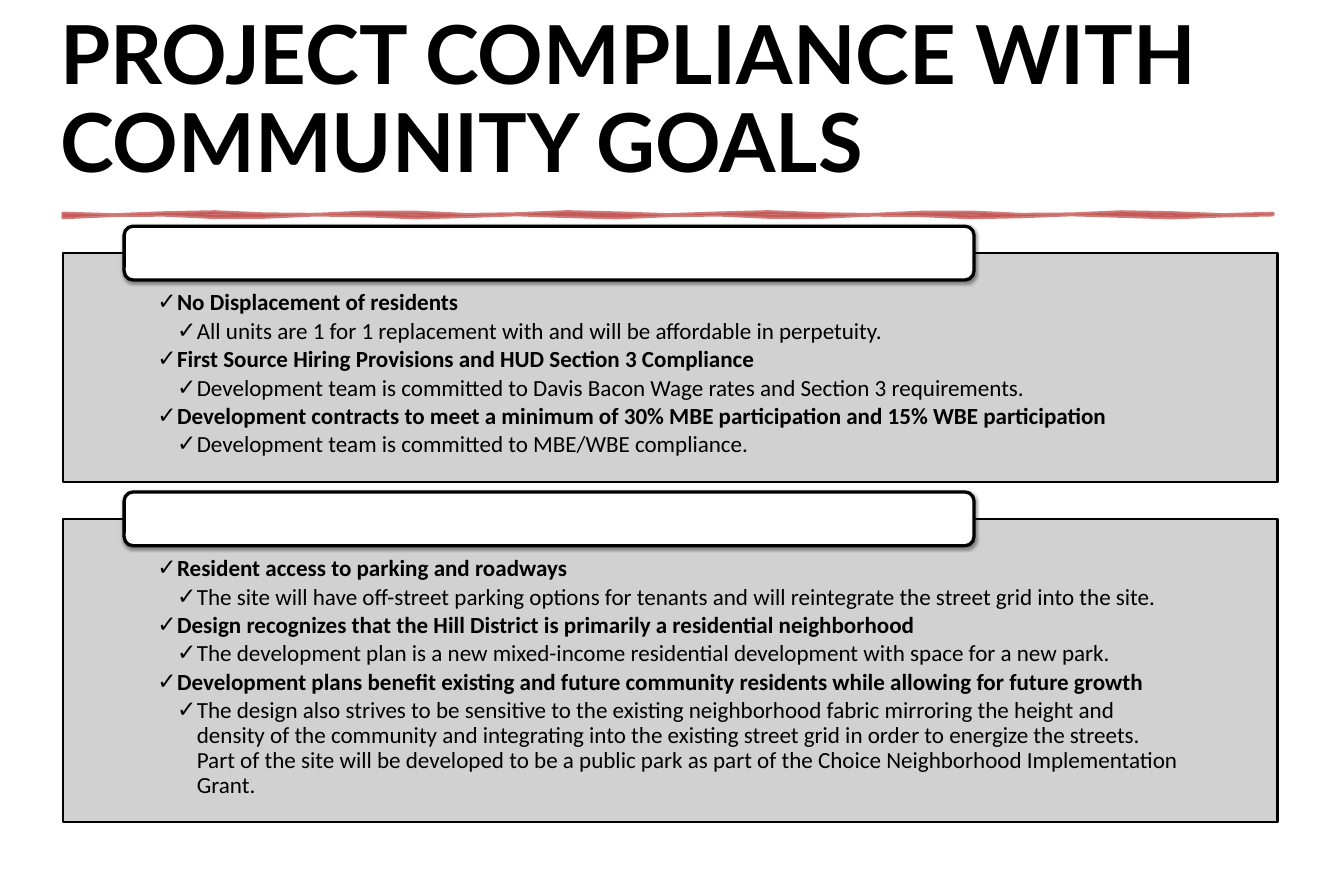
from math import sin

from lxml import etree
from pptx import Presentation
from pptx.dml.color import RGBColor
from pptx.enum.shapes import MSO_SHAPE
from pptx.enum.text import MSO_ANCHOR, PP_ALIGN
from pptx.oxml.ns import qn
from pptx.util import Pt

RECTANGLE = MSO_SHAPE.RECTANGLE
ROUNDED = MSO_SHAPE.ROUNDED_RECTANGLE
TOP, BOTTOM = MSO_ANCHOR.TOP, MSO_ANCHOR.BOTTOM
LEFT = PP_ALIGN.LEFT

BLACK = RGBColor(0x00, 0x00, 0x00)
WHITE = RGBColor(0xFF, 0xFF, 0xFF)
GRAY = RGBColor(0xCC, 0xCC, 0xCC)
RED = RGBColor(0xC0, 0x50, 0x4D)

MARGIN = 57.6
PANEL_WIDTH = 1105.92
TAB_LEFT, TAB_WIDTH, TAB_HEIGHT = 113.04, 774, 48.96
INDENT = 18

RESIDENT_GOALS = [
    ("No Displacement of residents",
     "All units are 1 for 1 replacement with and will be affordable in perpetuity."),
    ("First Source Hiring Provisions and HUD Section 3 Compliance",
     "Development team is committed to Davis Bacon Wage rates and Section 3 requirements."),
    ("Development contracts to meet a minimum of 30% MBE participation and 15% WBE participation",
     "Development team is committed to MBE/WBE compliance."),
]
DESIGN_GOALS = [
    ("Resident access to parking and roadways",
     "The site will have off-street parking options for tenants and will reintegrate "
     "the street grid into the site."),
    ("Design recognizes that the Hill District is primarily a residential neighborhood",
     "The development plan is a new mixed-income residential development with space "
     "for a new park."),
    ("Development plans benefit existing and future community residents while allowing "
     "for future growth",
     "The design also strives to be sensitive to the existing neighborhood fabric "
     "mirroring the height and density of the community and integrating into the "
     "existing street grid in order to energize the streets. Part of the site will be "
     "developed to be a public park as part of the Choice Neighborhood Implementation "
     "Grant."),
]


def set_opacity(color_parent, percent):
    color = color_parent.find(".//" + qn("a:srgbClr"))
    etree.SubElement(color, qn("a:alpha"), val=str(percent * 1000))


def paint(shape, fill, line, weight):
    shape.shadow.inherit = False
    shape.fill.solid()
    shape.fill.fore_color.rgb = fill
    shape.line.color.rgb = line
    shape.line.width = Pt(weight)


def set_frame(frame, anchor, left, top, right, bottom):
    frame.word_wrap = True
    frame.vertical_anchor = anchor
    frame.margin_left, frame.margin_top = Pt(left), Pt(top)
    frame.margin_right, frame.margin_bottom = Pt(right), Pt(bottom)


def style_text(paragraph, font_name, size, bold):
    paragraph.alignment = LEFT
    paragraph.line_spacing = 0.9
    font = paragraph.font
    font.name = font_name
    font.size = Pt(size)
    font.bold = bold
    font.color.rgb = BLACK


def add_title(slide, text):
    title = slide.shapes.add_textbox(Pt(54.72), Pt(7.2), Pt(1142.64), Pt(165.6))
    set_frame(title.text_frame, BOTTOM, 0, 0, 0, 0)
    paragraph = title.text_frame.paragraphs[0]
    paragraph.text = text
    style_text(paragraph, "Lato", 74, True)


def stroke_edge(base, phase):
    return [(Pt(MARGIN + 45.9 * step), Pt(base + 1.4 * sin(1.7 * step + phase)))
            for step in range(25)]


def add_brush_stroke(slide):
    outline = stroke_edge(194.4, 0) + stroke_edge(196.6, 2)[::-1]
    builder = slide.shapes.build_freeform(*outline[0])
    builder.add_line_segments(outline[1:])
    stroke = builder.convert_to_shape()
    paint(stroke, RED, RED, 3.5)
    properties = stroke._element.spPr
    set_opacity(properties.find(qn("a:solidFill")), 75)
    set_opacity(properties.find(qn("a:ln")), 75)


def add_goal_line(paragraph, text, level):
    paragraph.text = text
    paragraph.level = level
    paragraph.space_after = Pt(3.15)
    properties = paragraph._p.get_or_add_pPr()
    properties.set("marL", str(Pt(INDENT * level)))
    properties.set("indent", str(-Pt(INDENT)))
    etree.SubElement(properties, qn("a:buFont"), typeface="Calibri")
    etree.SubElement(properties, qn("a:buChar"), char="✓")
    style_text(paragraph, "Calibri", 21, level == 1)


def add_panel(slide, top, height, goals):
    panel = slide.shapes.add_shape(
        RECTANGLE, Pt(MARGIN), Pt(top), Pt(PANEL_WIDTH), Pt(height))
    paint(panel, GRAY, BLACK, 2)
    set_opacity(panel._element.spPr.find(qn("a:solidFill")), 90)
    frame = panel.text_frame
    set_frame(frame, TOP, 85.68, 34.56, 85.68, 11.52)
    lines = [(text, level) for goal in goals for level, text in enumerate(goal, 1)]
    for index, (text, level) in enumerate(lines):
        paragraph = frame.add_paragraph() if index else frame.paragraphs[0]
        add_goal_line(paragraph, text, level)


def add_tab(slide, panel_top):
    tab = slide.shapes.add_shape(
        ROUNDED, Pt(TAB_LEFT), Pt(panel_top - TAB_HEIGHT / 2), Pt(TAB_WIDTH), Pt(TAB_HEIGHT))
    paint(tab, WHITE, BLACK, 3)
    effects = tab._element.spPr.find(qn("a:effectLst"))
    shadow = etree.SubElement(
        effects, qn("a:outerShdw"), blurRad=str(Pt(3.1)), dist=str(Pt(1.6)),
        dir="5400000", rotWithShape="0")
    etree.SubElement(shadow, qn("a:srgbClr"), val=str(BLACK))
    set_opacity(shadow, 38)


def main():
    deck = Presentation()
    deck.slide_width, deck.slide_height = Pt(1224), Pt(792)
    slide = deck.slides.add_slide(deck.slide_layouts[6])
    add_title(slide, "PROJECT COMPLIANCE WITH COMMUNITY GOALS")
    add_brush_stroke(slide)
    for top, height, goals in ((230.4, 208.08, RESIDENT_GOALS),
                               (472.32, 275.76, DESIGN_GOALS)):
        add_panel(slide, top, height, goals)
        add_tab(slide, top)
    deck.save("out.pptx")


if __name__ == "__main__":
    main()
